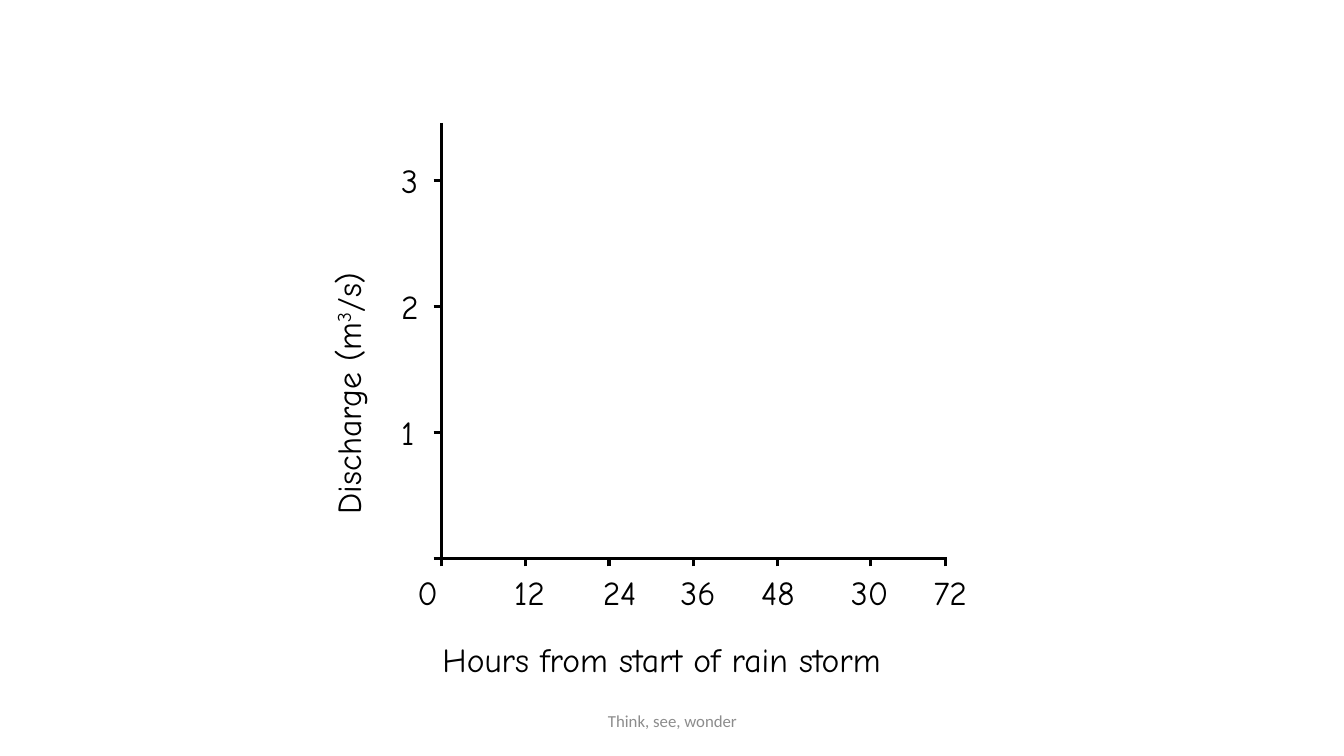
"""Build a blank storm hydrograph slide with labelled axes."""
from lxml.etree import SubElement
from pptx import Presentation
from pptx.dml.color import RGBColor
from pptx.enum.shapes import MSO_CONNECTOR
from pptx.enum.text import MSO_ANCHOR, PP_ALIGN
from pptx.oxml.ns import qn
from pptx.util import Inches, Pt

BLACK = RGBColor(0x00, 0x00, 0x00)
GREY = RGBColor(0x8C, 0x8C, 0x8C)
ORIGIN_X, ORIGIN_Y = 4.38, 5.54
TICK = 0.08

prs = Presentation()
prs.slide_width, prs.slide_height = Inches(13.33), Inches(7.5)
s = prs.slides.add_slide(prs.slide_layouts[6])


def add_line(x1, y1, x2, y2):
    line = s.shapes.add_connector(
        MSO_CONNECTOR.STRAIGHT, Inches(x1), Inches(y1), Inches(x2), Inches(y2))
    line.line.color.rgb = BLACK
    line.line.width = Pt(2.25)
    SubElement(line._element.spPr, qn("a:effectLst"))


def add_text(text, left, top, width, height=0.5, font="Comic Neue", size=24, color=BLACK):
    sp = s.shapes.add_textbox(Inches(left), Inches(top), Inches(width), Inches(height))
    sp.text_frame.word_wrap = True
    p = sp.text_frame.paragraphs[0]
    p.add_run().text = text
    p.font.name, p.font.size = font, Pt(size)
    p.font.color.rgb = color
    return sp, p


add_line(ORIGIN_X, ORIGIN_Y, 9.39, ORIGIN_Y)
add_line(ORIGIN_X, 1.22, ORIGIN_X, ORIGIN_Y)
for x in (ORIGIN_X, 5.21, 6.04, 6.88, 7.71, 8.63, 9.38):
    add_line(x, ORIGIN_Y + TICK, x, ORIGIN_Y)
for value in range(4):
    y = ORIGIN_Y - 1.25 * value
    add_line(ORIGIN_X - TICK, y, ORIGIN_X, y)
    if value:
        add_text(str(value), 3.88, y - 0.25, 0.42)

sp, p = add_text("0\t12\t24\t36\t48\t30\t72", 4.04, 5.62, 6.08)
tabs = p._p.get_or_add_pPr().makeelement(qn("a:tabLst"))
p._p.pPr.insert(0, tabs)
for stop in (0.96, 1.84, 2.61, 3.41, 4.3, 5.12):
    SubElement(tabs, qn("a:tab"), pos=str(Inches(stop)), algn="l")

add_text("Hours from start of rain storm", 4.29, 6.29, 5.17)

sp, p = add_text("Discharge (m", 1.95, 3.45, 3)
sp.rotation = 270
r = p.add_run()
r.text = "3"
r._r.get_or_add_rPr().set("baseline", "30000")
p.add_run().text = "/s)"

sp, p = add_text("Think, see, wonder", 4.42, 6.95, 4.5, 0.4, "Calibri", 12, GREY)
sp.text_frame.vertical_anchor = MSO_ANCHOR.MIDDLE
p.alignment = PP_ALIGN.CENTER

prs.save("out.pptx")
